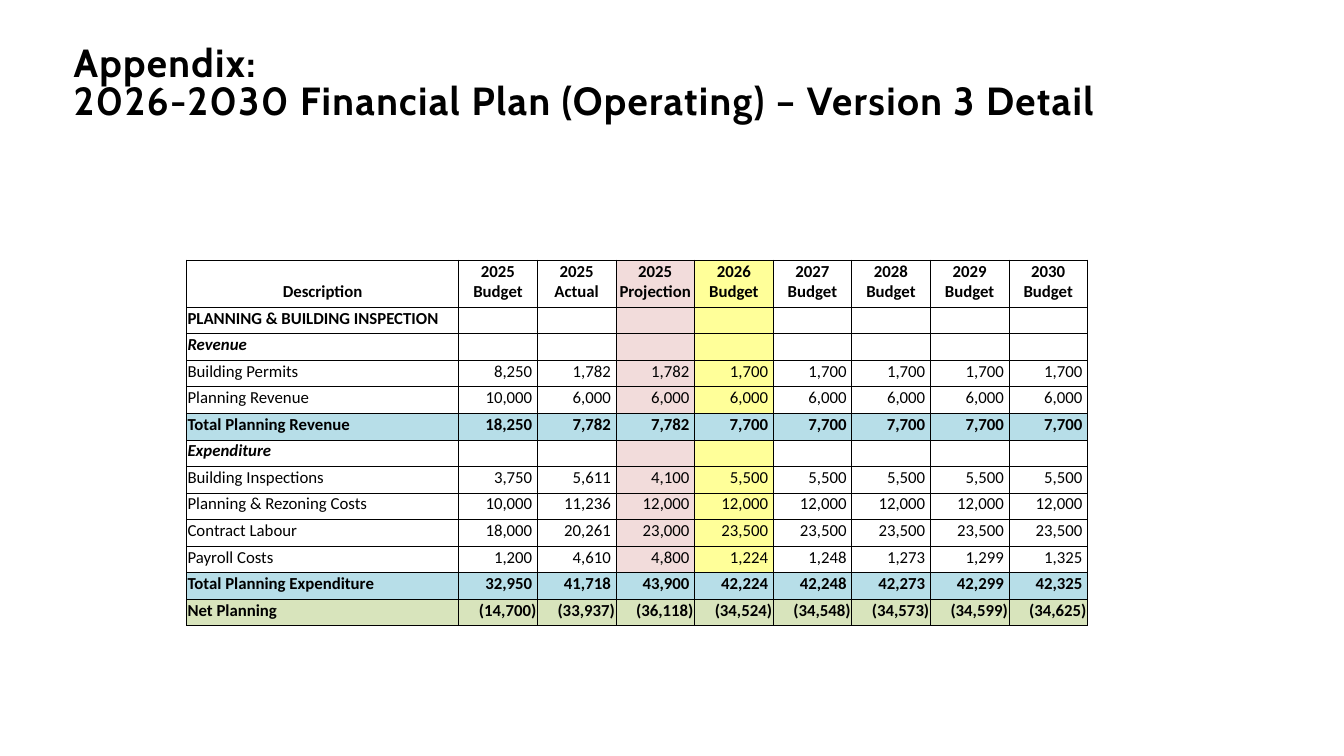
import copy

import pptx
import pptx.dml.color
import pptx.enum.text
import pptx.oxml
import pptx.oxml.ns
import pptx.util

THEME = {
    "ink": "000000", "projection": "F2DCDB", "budget": "FFFF99",
    "total": "B7DEE8", "net": "D8E4BC",
    "title_font": "Cabin", "title_size": 28,
    "table_font": "Calibri", "table_size": 12,
}
ALIGN = pptx.enum.text.PP_ALIGN
BOTTOM = pptx.enum.text.MSO_ANCHOR.BOTTOM
qn = pptx.oxml.ns.qn

prs = pptx.Presentation()
prs.slide_width = pptx.util.Inches(13.33)
prs.slide_height = pptx.util.Inches(7.5)
COL, ROW = prs.slide_width / 100, prs.slide_height / 100  # 100 x 100 grid


def put_text(tf, text, font, size, bold=False, italic=False, align=ALIGN.LEFT, spacing=0):
    """Fill the first paragraph; breaks and empty cells get the same format."""
    p = tf.paragraphs[0]
    p.text = text
    p.alignment = align
    for r in p.runs:
        r.font.name, r.font.size = font, pptx.util.Pt(size)
        r.font.bold, r.font.italic = bold, italic
        r.font.color.rgb = pptx.dml.color.RGBColor.from_string(THEME["ink"])
        if spacing:
            r.font._element.set("spc", str(spacing * 100))
        for br in p._p.findall(qn("a:br")):
            if br.find(qn("a:rPr")) is None:
                br.append(copy.deepcopy(r.font._element))
    if not text:
        end = p._p.makeelement(qn("a:endParaRPr"), {"sz": str(size * 100)})
        p._p.append(end)
    return p


def set_borders(cell, top, bottom):
    """Line the cell on all sides; top and bottom widths are in points."""
    sides = {"L": 0.5, "R": 0.5, "T": top, "B": bottom}
    for i, (side, width) in enumerate(sides.items()):
        ln = pptx.oxml.parse_xml(
            f'<a:ln{side} {pptx.oxml.ns.nsdecls("a")} w="{pptx.util.Pt(width)}">'
            f'<a:solidFill><a:srgbClr val="{THEME["ink"]}"/></a:solidFill></a:ln{side}>')
        cell._tc.get_or_add_tcPr().insert(i, ln)


s = prs.slides.add_slide(prs.slide_layouts[5])

# Title
title = s.shapes.title
title.left, title.top = int(5.48 * COL), int(-1.6 * ROW)
title.width, title.height = int(86.8 * COL), int(17.87 * ROW)
tf = title.text_frame
tf.auto_size = pptx.enum.text.MSO_AUTO_SIZE.NONE
tf.word_wrap = True
tf.vertical_anchor = BOTTOM
tf.margin_left = tf.margin_right = tf.margin_top = tf.margin_bottom = 0
p = put_text(tf, "Appendix:\v2026-2030 Financial Plan (Operating) – Version 3 Detail",
             THEME["title_font"], THEME["title_size"], bold=True, spacing=1)
p.line_spacing = 0.8

# Financial plan: (kind, label, values)
headers = ["2025 Budget", "2025 Actual", "2025 Projection", "2026 Budget",
           "2027 Budget", "2028 Budget", "2029 Budget", "2030 Budget"]
blank = [""] * len(headers)
plan = [
    ("header", "Description", headers),
    ("department", "PLANNING & BUILDING INSPECTION", blank),
    ("section", "Revenue", blank),
    ("item", "Building Permits", [8250, 1782, 1782] + [1700] * 5),
    ("item", "Planning Revenue", [10000] + [6000] * 7),
    ("total", "Total Planning Revenue", [18250, 7782, 7782] + [7700] * 5),
    ("section", "Expenditure", blank),
    ("item", "Building Inspections", [3750, 5611, 4100] + [5500] * 5),
    ("item", "Planning & Rezoning Costs", [10000, 11236] + [12000] * 6),
    ("item", "Contract Labour", [18000, 20261, 23000] + [23500] * 5),
    ("item", "Payroll Costs", [1200, 4610, 4800, 1224, 1248, 1273, 1299, 1325]),
    ("total", "Total Planning Expenditure",
     [32950, 41718, 43900, 42224, 42248, 42273, 42299, 42325]),
    ("net", "Net Planning",
     [-14700, -33937, -36118, -34524, -34548, -34573, -34599, -34625]),
]
kinds = [kind for kind, label, values in plan]
column_fills = {3: THEME["projection"], 4: THEME["budget"]}
label_width, value_width = int(20.25 * COL), int(5.85 * COL)
header_height, row_height = int(6.13 * ROW), int(3.5 * ROW)

table = s.shapes.add_table(
    len(plan), len(headers) + 1, int(13.88 * COL), int(34.4 * ROW),
    label_width + len(headers) * value_width,
    header_height + (len(plan) - 1) * row_height).table
table.first_row = table.horz_banding = False
for i, column in enumerate(table.columns):
    column.width = value_width if i else label_width

for i, (kind, label, values) in enumerate(plan):
    table.rows[i].height = row_height if i else header_height
    top = 1 if kind == "total" else 0.5
    bottom = 1 if "total" in kinds[i + 1:i + 2] else 0.5
    for j, value in enumerate([label] + values):
        cell = table.cell(i, j)
        cell.vertical_anchor = BOTTOM
        cell.margin_left = cell.margin_right = cell.margin_top = pptx.util.Inches(0.01)
        cell.margin_bottom = pptx.util.Inches(0.05)
        align = ALIGN.CENTER if kind == "header" else ALIGN.RIGHT if j else ALIGN.LEFT
        if isinstance(value, int):
            if value > 0:  # leave room for the closing bracket of negatives
                cell.margin_right = pptx.util.Inches(0.05)
            value = f"{value:,}" if value > 0 else f"({-value:,})"
        put_text(cell.text_frame, value, THEME["table_font"], THEME["table_size"],
                 bold=kind != "item", italic=kind == "section", align=align)
        fill = THEME[kind] if kind in ("total", "net") else column_fills.get(j)
        if fill:
            cell.fill.solid()
            cell.fill.fore_color.rgb = pptx.dml.color.RGBColor.from_string(fill)
        else:
            cell.fill.background()
        set_borders(cell, top, bottom)

prs.save("out.pptx")
